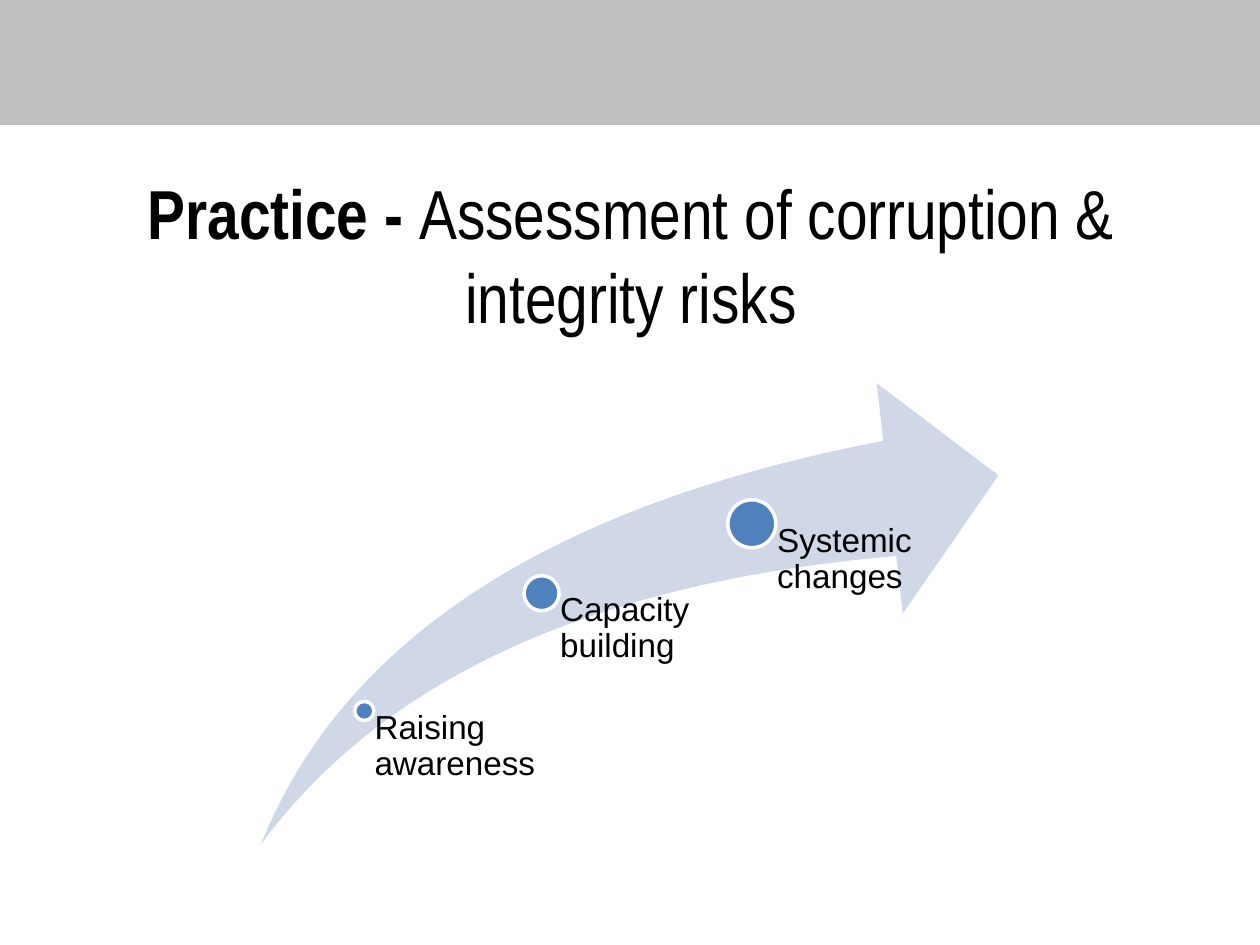
from pptx import Presentation
from pptx.dml.color import RGBColor
from pptx.enum.shapes import MSO_SHAPE
from pptx.enum.text import MSO_ANCHOR, MSO_AUTO_SIZE, PP_ALIGN
from pptx.util import Pt

GREY = RGBColor(0xBF, 0xBF, 0xBF)
PALE = RGBColor(0xD0, 0xD8, 0xE8)
BLUE = RGBColor(0x4F, 0x81, 0xBD)
WHITE = RGBColor(0xFF, 0xFF, 0xFF)
BLACK = RGBColor(0, 0, 0)


def draw(kind, left, top, width, height, fill):
    shape = slide.shapes.add_shape(kind, Pt(left), Pt(top), Pt(width), Pt(height))
    shape.shadow.inherit = False
    shape.fill.solid()
    shape.fill.fore_color.rgb = fill
    shape.line.fill.background()
    return shape


def style(item, form):
    for name, value in form.items():
        setattr(item, name, value)


deck = Presentation()
style(deck, {"slide_width": Pt(720), "slide_height": Pt(540)})
slide = deck.slides.add_slide(deck.slide_layouts[5])

# Top band
draw(MSO_SHAPE.RECTANGLE, 0, 0, 720, 71.4, GREY)

# Title
title = slide.shapes.title
style(title, {"left": Pt(36.5), "top": Pt(100), "width": Pt(648), "height": Pt(90)})
style(title.text_frame, {"vertical_anchor": MSO_ANCHOR.MIDDLE,
                         "auto_size": MSO_AUTO_SIZE.NONE, "word_wrap": True})
line = title.text_frame.paragraphs[0]
line.alignment = PP_ALIGN.CENTER
for text, bold in (("Practice - ", True),
                   ("Assessment of corruption & integrity risks", False)):
    run = line.add_run()
    run.text = text
    style(run.font, {"name": "Arial Narrow", "size": Pt(39.6), "bold": bold})
    run.font.color.rgb = BLACK

# Rising arrow
base = 482.4
arrow = draw(MSO_SHAPE.SWOOSH_ARROW, 149.2, 219, 421.4, base - 219, PALE)
arrow.adjustments[0] = 0.25
arrow.adjustments[1] = 0.25

# Steps: a dot, with its label starting at the dot's centre
steps = (
    ("Raising awareness", 208.2, 406.3, 11, 98),
    ("Capacity building", 309.5, 339, 20, 101),
    ("Systemic changes", 429.6, 299.3, 27.4, 101),
)
for text, x, y, size, width in steps:
    dot = draw(MSO_SHAPE.OVAL, x - size / 2, y - size / 2, size, size, BLUE)
    dot.line.color.rgb = WHITE
    dot.line.width = Pt(2)

    label = slide.shapes.add_textbox(Pt(x), Pt(y), Pt(width), Pt(base - y))
    frame = label.text_frame
    style(frame, {"word_wrap": True, "margin_left": Pt(0.53 * size),
                  "margin_top": 0, "margin_right": 0, "margin_bottom": 0})
    line = frame.paragraphs[0]
    line.text = text
    line.line_spacing = 0.9
    style(line.font, {"name": "Arial", "size": Pt(19)})
    line.font.color.rgb = BLACK

deck.save("out.pptx")
